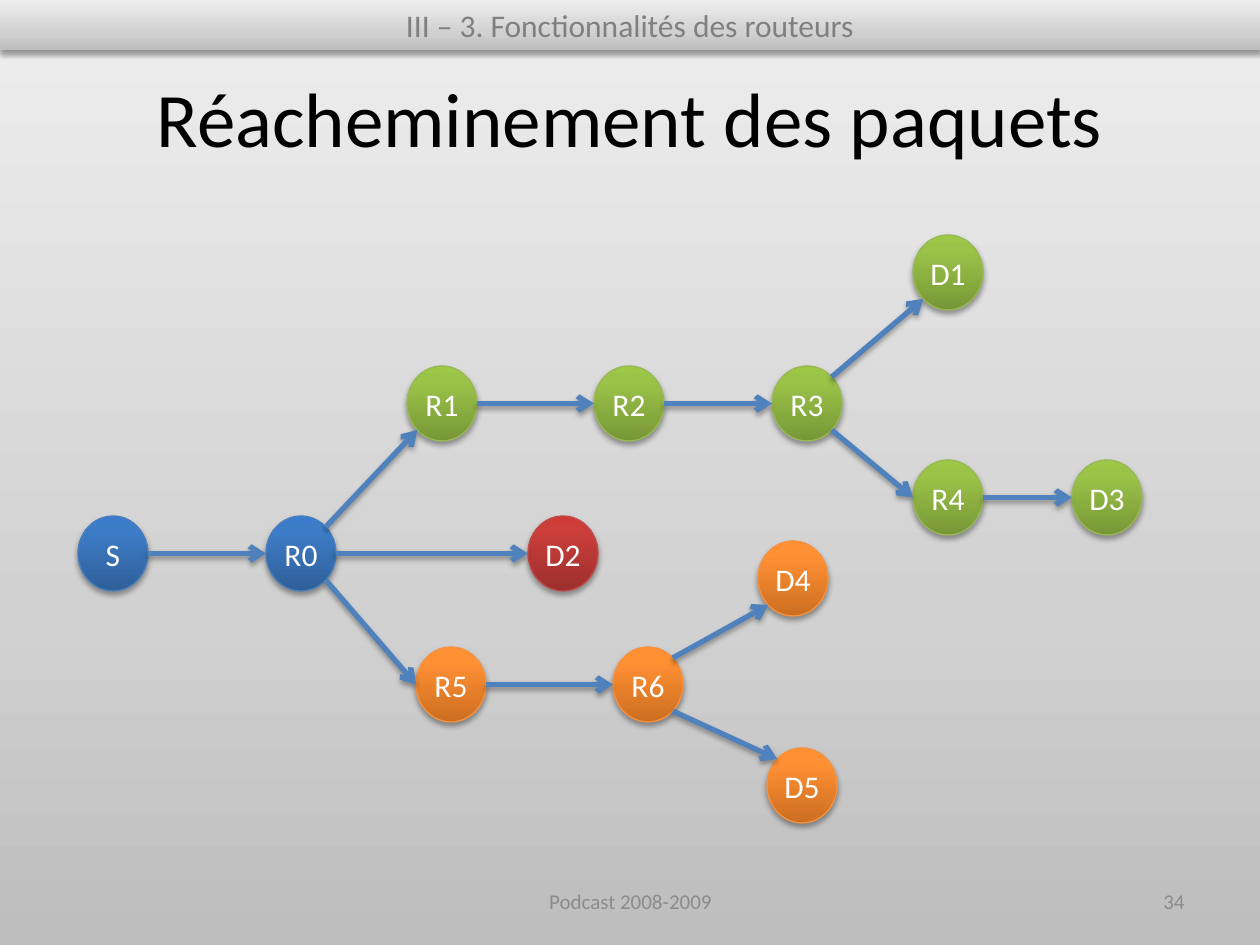
from copy import deepcopy
from math import sqrt

from lxml.etree import SubElement
from pptx import Presentation
from pptx.dml.color import RGBColor
from pptx.enum.shapes import MSO_CONNECTOR as CONNECTOR, MSO_SHAPE as SHAPE
from pptx.enum.text import MSO_ANCHOR as ANCHOR, PP_ALIGN as ALIGN
from pptx.oxml.ns import qn
from pptx.util import Pt

EMU_PER_PX = 914400 / 126
FONT = "Calibri"
BLACK = RGBColor(0x00, 0x00, 0x00)
WHITE = RGBColor(0xFF, 0xFF, 0xFF)
HEADER_GRAY = RGBColor(0x80, 0x80, 0x80)
FOOTER_GRAY = RGBColor(0x8C, 0x8C, 0x8C)
ARROW_BLUE = RGBColor(0x4F, 0x81, 0xBD)
GRAYS = (
    (0, RGBColor(0xBD, 0xBD, 0xBD)),
    (0.35, RGBColor(0xD1, 0xD1, 0xD1)),
    (1, RGBColor(0xEE, 0xEE, 0xEE)),
)


def node_style(bottom, middle, top, outline):
    """Return the gradient stops and the outline colour of a group of nodes."""
    return ((0, bottom), (0.8, middle), (1, top)), outline


BLUE = node_style(RGBColor(0x2F, 0x5F, 0x99), RGBColor(0x3D, 0x7C, 0xC7),
                  RGBColor(0x3A, 0x7C, 0xCB), RGBColor(0x4B, 0x7E, 0xBC))
GREEN = node_style(RGBColor(0x77, 0x97, 0x37), RGBColor(0x9B, 0xC3, 0x48),
                   RGBColor(0x9D, 0xC7, 0x46), RGBColor(0x98, 0xB9, 0x55))
ORANGE = node_style(RGBColor(0xCC, 0x6E, 0x20), RGBColor(0xFF, 0x90, 0x34),
                    RGBColor(0xFF, 0x91, 0x36), RGBColor(0xF6, 0x92, 0x40))
RED = node_style(RGBColor(0x9C, 0x2F, 0x2D), RGBColor(0xCB, 0x3E, 0x3A),
                 RGBColor(0xCE, 0x3B, 0x37), RGBColor(0xBF, 0x4C, 0x48))

NODE_WIDTH, NODE_HEIGHT = 70, 75
NODES = {
    "S": (0, 281, BLUE),
    "R0": (188, 281, BLUE),
    "R1": (329, 131, GREEN),
    "R5": (338, 412, ORANGE),
    "R2": (516, 131, GREEN),
    "R6": (535, 412, ORANGE),
    "R4": (835, 225, GREEN),
    "R3": (694, 131, GREEN),
    "D2": (450, 281, RED),
    "D3": (994, 225, GREEN),
    "D5": (689, 513, ORANGE),
    "D4": (680, 306, ORANGE),
    "D1": (835, 0, GREEN),
}
DIAGONAL = sqrt(0.5)
SITES = {
    "E": (1, 0),
    "W": (-1, 0),
    "NE": (DIAGONAL, -DIAGONAL),
    "NW": (-DIAGONAL, -DIAGONAL),
    "SE": (DIAGONAL, DIAGONAL),
    "SW": (-DIAGONAL, DIAGONAL),
}
ROUTES = (
    ("S", "E", "R0", "W"),
    ("R0", "NE", "R1", "SW"),
    ("R0", "SE", "R5", "W"),
    ("R0", "E", "D2", "W"),
    ("R1", "E", "R2", "W"),
    ("R2", "E", "R3", "W"),
    ("R3", "NE", "D1", "SW"),
    ("R3", "SE", "R4", "W"),
    ("R4", "E", "D3", "W"),
    ("R5", "E", "R6", "W"),
    ("R6", "NE", "D4", "SW"),
    ("R6", "SE", "D5", "NW"),
)


def px(*lengths):
    """Turn pixel lengths into a list of EMU lengths."""
    return [round(length * EMU_PER_PX) for length in lengths]


def set_gradient(fill, element, stops):
    """Give a fill a gradient that rises from the bottom through the stops."""
    fill.gradient()
    fill.gradient_angle = 90
    stop_list = next(element.iter(qn("a:gsLst")))
    while len(stop_list) < len(stops):
        stop_list.append(deepcopy(stop_list[0]))
    for stop, (position, color) in zip(fill.gradient_stops, stops):
        stop.position = position
        stop.color.rgb = color


def add_shadow(shape, opacity=35, distance=1.8):
    """Cast a soft black shadow below a shape or a connector."""
    effects = SubElement(shape.element.spPr, qn("a:effectLst"))
    shadow = SubElement(effects, qn("a:outerShdw"), blurRad=str(Pt(3.1)),
                        dist=str(Pt(distance)), dir="5400000", rotWithShape="0")
    color = SubElement(shadow, qn("a:srgbClr"), val=str(BLACK))
    SubElement(color, qn("a:alpha"), val=str(opacity * 1000))


def set_text(shape, text, size, color, align=ALIGN.CENTER, wrap=True):
    """Write one vertically centred line of text in a shape."""
    frame = shape.text_frame
    frame.text = text
    frame.word_wrap = wrap
    frame.vertical_anchor = ANCHOR.MIDDLE
    paragraph = frame.paragraphs[0]
    paragraph.alignment = align
    font = paragraph.runs[0].font
    font.name, font.size, font.color.rgb = FONT, Pt(size), color


def add_label(slide, box, text, size, color, align=ALIGN.CENTER):
    """Add a text box that fills the given box."""
    set_text(slide.shapes.add_textbox(*px(*box)), text, size, color, align)


def add_header(slide, box, text):
    """Add the shaded chapter bar."""
    bar = slide.shapes.add_shape(SHAPE.RECTANGLE, *px(*box))
    set_gradient(bar.fill, bar.element, GRAYS)
    bar.line.fill.background()
    add_shadow(bar, opacity=38, distance=1.6)
    set_text(bar, text, 18, HEADER_GRAY)


def add_footer(slide, box, text, number):
    """Add the centred footer and the slide number at the right of the box."""
    left, top, width, height = box
    add_label(slide, (left + 368, top, 399, height), text, 12, FOOTER_GRAY)
    add_label(slide, (left + width - 294, top, 294, height), number, 12,
              FOOTER_GRAY, ALIGN.RIGHT)


def add_node(slide, box, name, style):
    """Add one round network node."""
    stops, outline = style
    node = slide.shapes.add_shape(SHAPE.OVAL, *px(*box))
    set_gradient(node.fill, node.element, stops)
    node.line.color.rgb = outline
    node.line.width = Pt(0.75)
    add_shadow(node)
    set_text(node, name, 18, WHITE, wrap=False)
    node.text_frame.margin_left = node.text_frame.margin_right = 0


def add_arrow(slide, start, end):
    """Add an arrow between two points."""
    arrow = slide.shapes.add_connector(CONNECTOR.STRAIGHT, *px(*start, *end))
    arrow.line.color.rgb = ARROW_BLUE
    arrow.line.width = Pt(3)
    SubElement(arrow.line._get_or_add_ln(), qn("a:tailEnd"), type="arrow")
    add_shadow(arrow)


def add_network(slide, box):
    """Add the nodes and the routes between them, relative to the box."""
    left, top = box[:2]

    def site_point(name, site):
        """Return the point on the rim of a node at a compass site."""
        x, y, _ = NODES[name]
        across, down = SITES[site]
        return (left + x + NODE_WIDTH / 2 * (1 + across),
                top + y + NODE_HEIGHT / 2 * (1 + down))

    for name, (x, y, style) in NODES.items():
        add_node(slide, (left + x, top + y, NODE_WIDTH, NODE_HEIGHT), name, style)
    for source, source_site, target, target_site in ROUTES:
        add_arrow(slide, site_point(source, source_site),
                  site_point(target, target_site))


def main():
    """Build and save the slide."""
    presentation = Presentation()
    presentation.slide_width, presentation.slide_height = px(1260, 945)
    slide = presentation.slides.add_slide(presentation.slide_layouts[6])
    set_gradient(slide.background.fill, slide.element, GRAYS)
    add_label(slide, (63, 38, 1134, 157), "Réacheminement des paquets", 44, BLACK)
    add_footer(slide, (63, 876, 1134, 50), "Podcast 2008-2009", "34")
    add_header(slide, (0, 0, 1260, 50), "III – 3. Fonctionnalités des routeurs")
    add_network(slide, (78, 235, 1064, 588))
    presentation.save("out.pptx")


if __name__ == "__main__":
    main()
